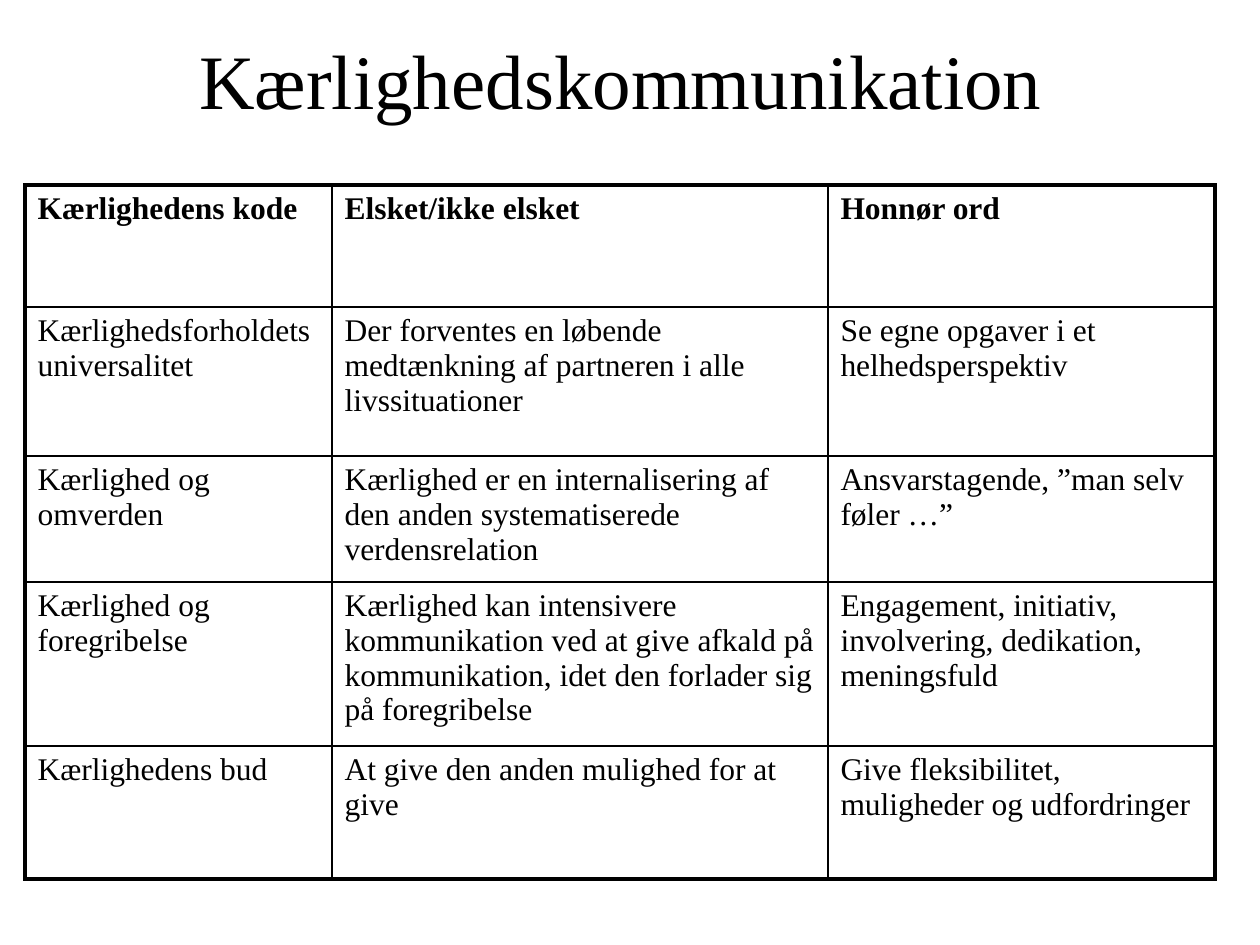
from lxml.etree import SubElement
from pptx import Presentation
from pptx.dml.color import RGBColor
from pptx.enum.text import MSO_ANCHOR, PP_ALIGN
from pptx.oxml.ns import qn
from pptx.util import Emu, Pt

PX = 914400 // 126
FONT = "Times New Roman"
INK = "000000"
THIN, THICK = 1, 2.25


def style(paragraph, size, bold=False):
    for run in paragraph.runs:
        run.font.name = FONT
        run.font.size = Pt(size)
        run.font.bold = bold
        run.font.color.rgb = RGBColor.from_string(INK)


def add_border(cell, side, width):
    line = SubElement(cell._tc.get_or_add_tcPr(), qn(f"a:ln{side}"), w=str(Pt(width)))
    fill = SubElement(line, qn("a:solidFill"))
    SubElement(fill, qn("a:srgbClr"), val=INK)


prs = Presentation()
prs.slide_width, prs.slide_height = 1260 * PX, 945 * PX
slide = prs.slides.add_slide(prs.slide_layouts[5])

# Title
title = slide.shapes.title
title.left, title.top, title.width, title.height = (Emu(n * PX) for n in (54, 0, 1134, 158))
title.text_frame.text = "Kærlighedskommunikation"
title.text_frame.vertical_anchor = MSO_ANCHOR.MIDDLE
heading = title.text_frame.paragraphs[0]
heading.alignment = PP_ALIGN.CENTER
style(heading, 44)

# Table of love's code, expectations and words of honour
rows = [
    ("Kærlighedens kode", "Elsket/ikke elsket", "Honnør ord"),
    ("Kærlighedsforholdets universalitet",
     "Der forventes en løbende medtænkning af partneren i alle livssituationer",
     "Se egne opgaver i et helhedsperspektiv"),
    ("Kærlighed og omverden",
     "Kærlighed er en internalisering af den anden systematiserede verdensrelation",
     "Ansvarstagende, ”man selv føler …”"),
    ("Kærlighed og foregribelse",
     "Kærlighed kan intensivere kommunikation ved at give afkald på kommunikation, "
     "idet den forlader sig på foregribelse",
     "Engagement, initiativ, involvering, dedikation, meningsfuld"),
    ("Kærlighedens bud", "At give den anden mulighed for at give",
     "Give fleksibilitet, muligheder og udfordringer"),
]
column_widths = [307, 496, 387]
row_heights = [122, 149, 126, 164, 133]
last_row, last_column = len(row_heights) - 1, len(column_widths) - 1

table = slide.shapes.add_table(
    len(row_heights), len(column_widths), 25 * PX, 185 * PX,
    sum(column_widths) * PX, sum(row_heights) * PX).table
table.horz_banding = False
for column, width in zip(table.columns, column_widths):
    column.width = width * PX
for row, height in zip(table.rows, row_heights):
    row.height = height * PX

for r, texts in enumerate(rows):
    for c, text in enumerate(texts):
        cell = table.cell(r, c)
        cell.text_frame.text = text
        style(cell.text_frame.paragraphs[0], 18, bold=r == 0)
        # Thick outer frame, thin inner lines; borders precede the fill
        outer_sides = {"L": c == 0, "R": c == last_column, "T": r == 0, "B": r == last_row}
        for side, is_outer in outer_sides.items():
            add_border(cell, side, THICK if is_outer else THIN)
        cell.fill.background()

prs.save("out.pptx")
